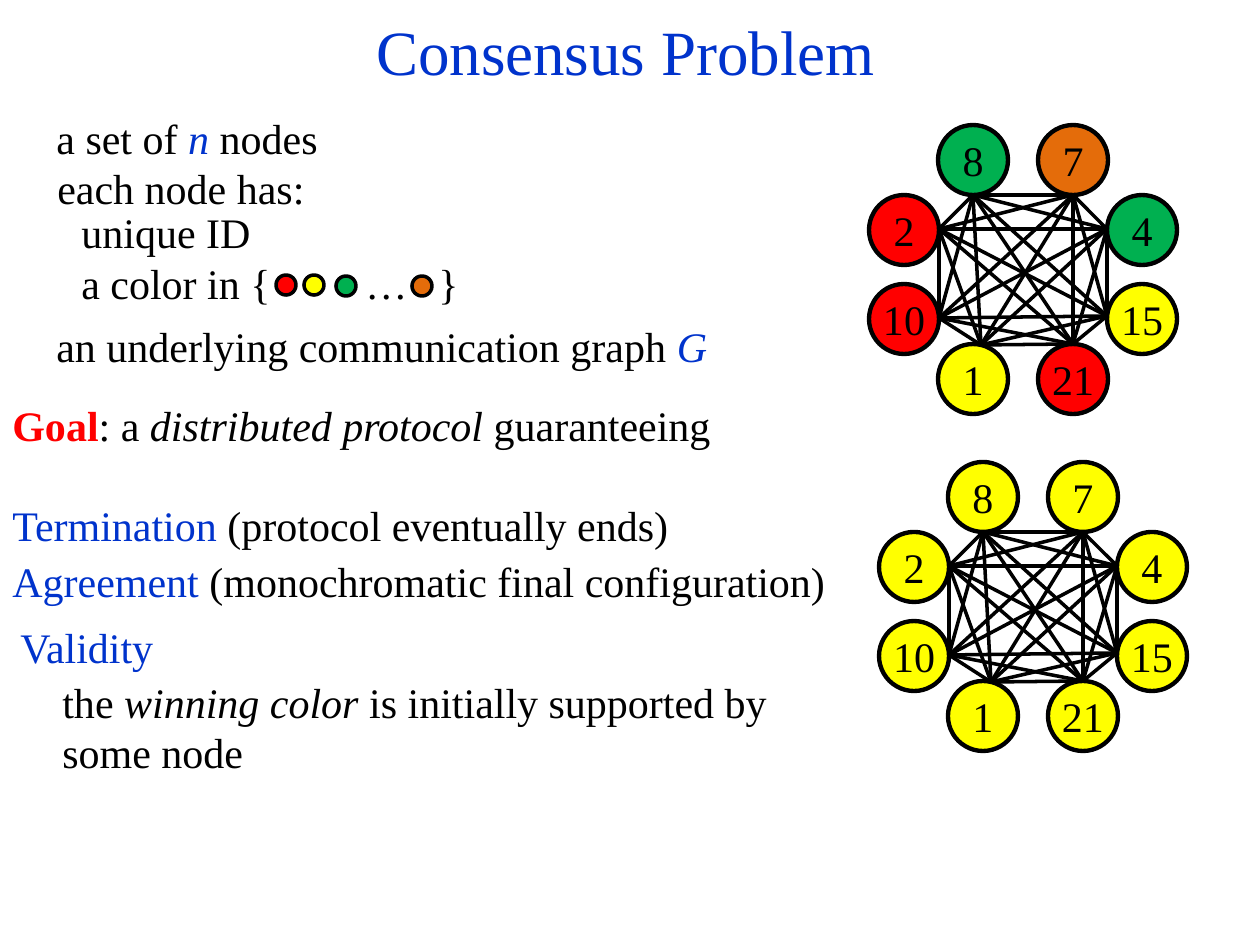
from itertools import combinations

from lxml.etree import SubElement
from pptx import Presentation
from pptx.dml.color import RGBColor
from pptx.enum.shapes import MSO_CONNECTOR, MSO_SHAPE
from pptx.enum.text import MSO_ANCHOR, MSO_AUTO_SIZE, PP_ALIGN
from pptx.oxml.ns import qn
from pptx.util import Pt

EMU_PER_PX = 914400 / 126
COLORS = {
    "black": "000000",
    "blue": "0033CC",
    "red": "FF0000",
    "yellow": "FFFF00",
    "green": "00B050",
    "orange": "E46C0A",
}
NODE_SIZE = 70
NODES = {
    "8": (69, 0),
    "7": (169, 0),
    "1": (69, 219),
    "21": (169, 219),
    "4": (238, 70),
    "15": (238, 159),
    "2": (0, 70),
    "10": (0, 159),
}
EDGE_ENDS = {
    "8": (104, 70),
    "7": (204, 70),
    "1": (112, 220),
    "21": (204, 219),
    "4": (238, 104),
    "15": (238, 191),
    "2": (70, 104),
    "10": (70, 193),
}
INITIAL_COLORS = {
    "8": "green",
    "7": "orange",
    "1": "yellow",
    "21": "red",
    "4": "green",
    "15": "yellow",
    "2": "red",
    "10": "red",
}
FINAL_COLORS = dict.fromkeys(NODES, "yellow")


def px(*lengths):
    return [round(length * EMU_PER_PX) for length in lengths]


def rgb(color):
    return RGBColor.from_string(COLORS[color])


def write(paragraph, text, font="Times New Roman", size=24, color="black", bold=False, italic=False):
    run = paragraph.add_run()
    run.text = text
    run.font.name = font
    run.font.size = Pt(size)
    run.font.bold = bold
    run.font.italic = italic
    run.font.color.rgb = rgb(color)


class ConsensusSlide:
    edge_width = Pt(2)
    node_outline = Pt(2.5)

    def __init__(self, presentation):
        self.slide = presentation.slides.add_slide(presentation.slide_layouts[5])

    def title(self, text, left, top, width, height):
        heading = self.slide.shapes.title
        heading.left, heading.top, heading.width, heading.height = px(left, top, width, height)
        heading.text_frame.vertical_anchor = MSO_ANCHOR.TOP
        paragraph = heading.text_frame.paragraphs[0]
        paragraph.alignment = PP_ALIGN.CENTER
        write(paragraph, text, size=36, color="blue")

    def statement(self, left, top, width, *parts, height=63, tabs=()):
        box = self.slide.shapes.add_textbox(*px(left, top, width, height))
        frame = box.text_frame
        frame.word_wrap = True
        frame.auto_size = MSO_AUTO_SIZE.SHAPE_TO_FIT_TEXT
        paragraph = frame.paragraphs[0]
        for text, style in parts:
            write(paragraph, text, **style)
        if tabs:
            tab_list = SubElement(paragraph._p.get_or_add_pPr(), qn("a:tabLst"))
            for position in px(*tabs):
                SubElement(tab_list, qn("a:tab"), pos=str(position), algn="l")

    def circle(self, shapes, left, top, size, color, outline, label=""):
        disc = shapes.add_shape(MSO_SHAPE.OVAL, *px(left, top, size, size))
        disc.shadow.inherit = False
        disc.fill.solid()
        disc.fill.fore_color.rgb = rgb(color)
        disc.line.color.rgb = rgb("black")
        disc.line.width = outline
        if label:
            frame = disc.text_frame
            frame.word_wrap = False
            frame.vertical_anchor = MSO_ANCHOR.MIDDLE
            frame.margin_left = frame.margin_right = frame.margin_top = frame.margin_bottom = 0
            frame.paragraphs[0].alignment = PP_ALIGN.CENTER
            write(frame.paragraphs[0], label)

    def edge(self, shapes, start, end):
        link = shapes.add_connector(MSO_CONNECTOR.STRAIGHT, *px(*start, *end))
        link.line.color.rgb = rgb("black")
        link.line.width = self.edge_width
        SubElement(link._element.spPr, qn("a:effectLst"))

    def network(self, left, top, node_colors):
        shapes = self.slide.shapes.add_group_shape().shapes
        for label, (x, y) in NODES.items():
            self.circle(shapes, left + x, top + y, NODE_SIZE, node_colors[label], self.node_outline, label)
        ends = [(left + x, top + y) for x, y in EDGE_ENDS.values()]
        for start, end in combinations(ends, 2):
            self.edge(shapes, start, end)

    def palette(self, dots, size):
        for color, left, top in dots:
            self.circle(self.slide.shapes, left, top, size, color, self.edge_width)


def main():
    presentation = Presentation()
    presentation.slide_width, presentation.slide_height = px(1260, 945)
    page = ConsensusSlide(presentation)
    plain, blue, italic = {}, {"color": "blue"}, {"italic": True}
    symbol = {"color": "blue", "italic": True}

    page.title("Consensus Problem", 15, 6, 1221, 89)
    page.statement(44, 106, 407, ("a set of ", plain), ("n", symbol), (" nodes", plain))
    page.statement(45, 156, 287, ("each node has:", plain))
    page.statement(69, 200, 197, ("unique ID", plain))
    page.statement(69, 251, 406, ("a color in {\t…\t}", plain), tabs=(284, 357))
    page.palette(
        [("red", 276, 275), ("yellow", 304, 275), ("green", 336, 276), ("orange", 412, 276)], 20
    )
    page.statement(44, 314, 704, ("an underlying communication graph ", plain), ("G", symbol))
    page.statement(
        0, 393, 858,
        ("Goal", {"color": "red", "bold": True}),
        (": a ", plain),
        ("distributed protocol", italic),
        (" guaranteeing", plain),
    )
    page.statement(0, 493, 704, ("Termination", blue), (" (protocol eventually ends)", plain))
    page.statement(0, 549, 853, ("Agreement", blue), (" (monochromatic final configuration)", plain))
    page.statement(8, 615, 853, ("Validity", blue))
    page.statement(
        50, 670, 745,
        ("the ", plain),
        ("winning color ", italic),
        ("is initially supported by some node", plain),
        height=115,
    )
    page.network(869, 125, INITIAL_COLORS)
    page.network(879, 462, FINAL_COLORS)

    presentation.save("out.pptx")


if __name__ == "__main__":
    main()
